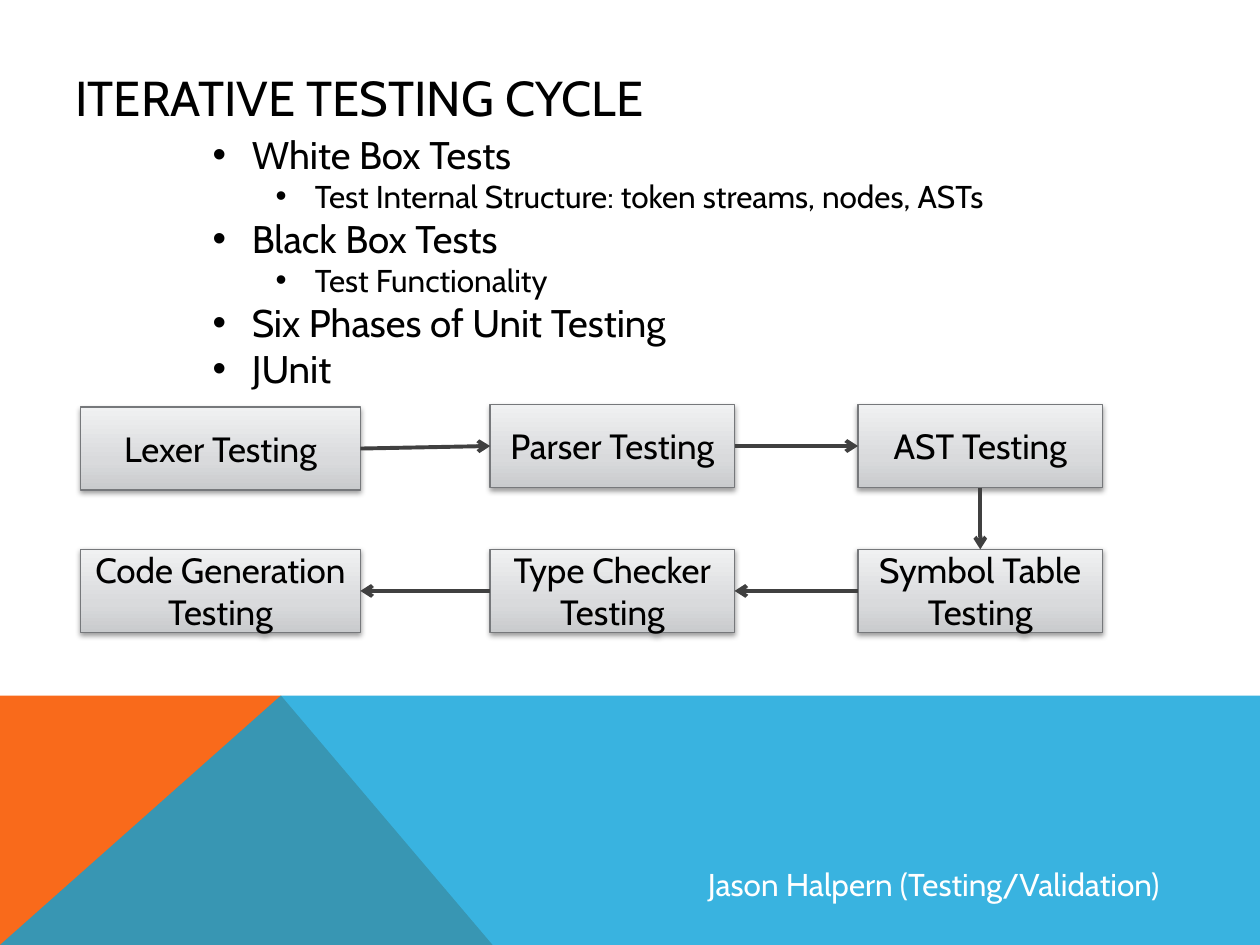
from dataclasses import dataclass

from lxml import etree
from pptx import Presentation, util as u
from pptx.dml.color import RGBColor
from pptx.enum import shapes, text
from pptx.oxml import ns

WIDTH, HEIGHT = 10, 7.5
FONT = "Cabin"
COLORS = {
    "ink": "000000",
    "white": "FFFFFF",
    "orange": "F96A1B",
    "blue": "08A1D9",
    "border": "76787B",
    "arrow": "404040",
    "shade": "C9CBCD",
    "mid": "D9DADC",
    "light": "F0F1F2",
}
COLUMNS = [(0.64, 2.22), (3.89, 1.94), (6.81, 1.94)]
ROWS = [3.21, 4.36]
PHASE_HEIGHT = 0.66
BAND_TOP, PEAK = 5.52, 2.23
TOP, LEFT, BOTTOM, RIGHT = range(4)


@dataclass(frozen=True)
class Phase:
    lines: tuple[str, ...]
    column: int
    row: int
    drop: float = 0


@dataclass(frozen=True)
class Step:
    source: int
    exit_side: int
    target: int
    entry_side: int


@dataclass(frozen=True)
class Topic:
    label: str
    level: int = 0


PHASES = [
    Phase(("Lexer Testing",), 0, 0, 0.02),
    Phase(("Parser Testing",), 1, 0),
    Phase(("AST Testing",), 2, 0),
    Phase(("Symbol Table Testing",), 2, 1),
    Phase(("Type Checker Testing",), 1, 1),
    Phase(("Code Generation", "Testing"), 0, 1),
]
STEPS = [
    Step(0, RIGHT, 1, LEFT),
    Step(1, RIGHT, 2, LEFT),
    Step(2, BOTTOM, 3, TOP),
    Step(3, LEFT, 4, RIGHT),
    Step(4, LEFT, 5, RIGHT),
]
TOPICS = [
    Topic("White Box Tests"),
    Topic("Test Internal Structure: token streams, nodes, ASTs", 1),
    Topic("Black Box Tests"),
    Topic("Test Functionality", 1),
    Topic("Six Phases of Unit Testing"),
    Topic("JUnit"),
]


def rgb(name: str) -> RGBColor:
    return RGBColor.from_string(COLORS[name])


def add_node(parent, tag: str, **attributes):
    return etree.SubElement(
        parent, ns.qn(tag), {key: str(value) for key, value in attributes.items()}
    )


def write(paragraph, words: str, *, size: float, color: str = "ink",
          align=text.PP_ALIGN.LEFT) -> None:
    paragraph.alignment = align
    run = paragraph.add_run()
    run.text = words
    run.font.name = FONT
    run.font.size = u.Pt(size)
    run.font.color.rgb = rgb(color)


def paragraph_at(frame, index: int):
    return frame.add_paragraph() if index else frame.paragraphs[0]


def add_frame(slide, left: float, top: float, width: float, height: float,
              anchor=text.MSO_ANCHOR.TOP, wrap: bool = False):
    frame = slide.shapes.add_textbox(*map(u.Inches, (left, top, width, height))).text_frame
    frame.word_wrap = wrap
    frame.vertical_anchor = anchor
    return frame


def add_band(slide, points: list[tuple[float, float]], color: str, opacity: int = 100) -> None:
    corners = [(u.Inches(x), u.Inches(y)) for x, y in points]
    builder = slide.shapes.build_freeform(*corners[0])
    builder.add_line_segments(corners[1:], close=True)
    band = builder.convert_to_shape()
    band.shadow.inherit = False
    band.fill.solid()
    band.fill.fore_color.rgb = rgb(color)
    band.line.fill.background()
    if opacity < 100:
        tint = band._element.spPr.find(ns.qn("a:solidFill"))[0]
        add_node(tint, "a:alpha", val=opacity * 1000)


def add_topics(slide) -> None:
    frame = add_frame(slide, 1.59, 0.99, 6.43, 2.86)
    for index, topic in enumerate(TOPICS):
        paragraph = paragraph_at(frame, index)
        paragraph.level = topic.level
        write(paragraph, topic.label, size=18 if topic.level else 22)
        properties = paragraph._p.get_or_add_pPr()
        properties.set("marL", str(u.Inches(0.31 + 0.5 * topic.level)))
        properties.set("indent", str(-u.Inches(0.31)))
        add_node(properties, "a:buFont", typeface="Arial")
        add_node(properties, "a:buChar", char="•")


def style_phase(box) -> None:
    box.line.color.rgb = rgb("border")
    box.line.width = u.Pt(0.75)
    box.shadow.inherit = False
    properties = box._element.spPr
    gradient = add_node(properties, "a:gradFill", rotWithShape=1)
    stops = add_node(gradient, "a:gsLst")
    for share, color in ((0, "shade"), (35, "mid"), (100, "light")):
        stop = add_node(stops, "a:gs", pos=share * 1000)
        add_node(stop, "a:srgbClr", val=COLORS[color])
    add_node(gradient, "a:lin", ang=270 * 60000, scaled=0)
    properties.find(ns.qn("a:prstGeom")).addnext(gradient)
    shadow = add_node(properties.find(ns.qn("a:effectLst")), "a:outerShdw",
                      blurRad=u.Pt(3.1), dist=u.Pt(1.6), dir=90 * 60000, rotWithShape=0)
    add_node(add_node(shadow, "a:srgbClr", val=COLORS["ink"]), "a:alpha", val=38000)


def add_phase(slide, phase: Phase):
    left, width = COLUMNS[phase.column]
    top = ROWS[phase.row] + phase.drop
    box = slide.shapes.add_shape(shapes.MSO_SHAPE.RECTANGLE,
                                 *map(u.Inches, (left, top, width, PHASE_HEIGHT)))
    style_phase(box)
    frame = box.text_frame
    frame.word_wrap = True
    frame.vertical_anchor = text.MSO_ANCHOR.MIDDLE
    for index, line in enumerate(phase.lines):
        write(paragraph_at(frame, index), line, size=20, align=text.PP_ALIGN.CENTER)
    return box


def add_step(slide, step: Step, boxes: list) -> None:
    arrow = slide.shapes.add_connector(shapes.MSO_CONNECTOR.STRAIGHT, 0, 0, 0, 0)
    arrow.begin_connect(boxes[step.source], step.exit_side)
    arrow.end_connect(boxes[step.target], step.entry_side)
    arrow.line.color.rgb = rgb("arrow")
    arrow.line.width = u.Pt(2.25)
    add_node(arrow.line._get_or_add_ln(), "a:tailEnd", type="arrow")
    add_node(arrow._element.spPr, "a:effectLst")


def main() -> None:
    deck = Presentation()
    deck.slide_width, deck.slide_height = u.Inches(WIDTH), u.Inches(HEIGHT)
    slide = deck.slides.add_slide(deck.slide_layouts[6])

    add_band(slide, [(0, HEIGHT), (0, BAND_TOP), (PEAK, BAND_TOP), (3.91, HEIGHT)], "orange")
    add_band(slide, [(0, HEIGHT), (PEAK, BAND_TOP), (WIDTH, BAND_TOP), (WIDTH, HEIGHT)],
             "blue", opacity=80)

    heading = add_frame(slide, 0.5, 0.14, 9, 1.25, text.MSO_ANCHOR.MIDDLE, wrap=True)
    write(heading.paragraphs[0], "ITERATIVE TESTING CYCLE", size=28)
    add_topics(slide)

    boxes = [add_phase(slide, phase) for phase in PHASES]
    for step in STEPS:
        add_step(slide, step, boxes)

    presenter = add_frame(slide, 5.52, 6.82, 3.84, 0.4)
    write(presenter.paragraphs[0], "Jason Halpern (Testing/Validation)", size=18, color="white")
    deck.save("out.pptx")


if __name__ == "__main__":
    main()
